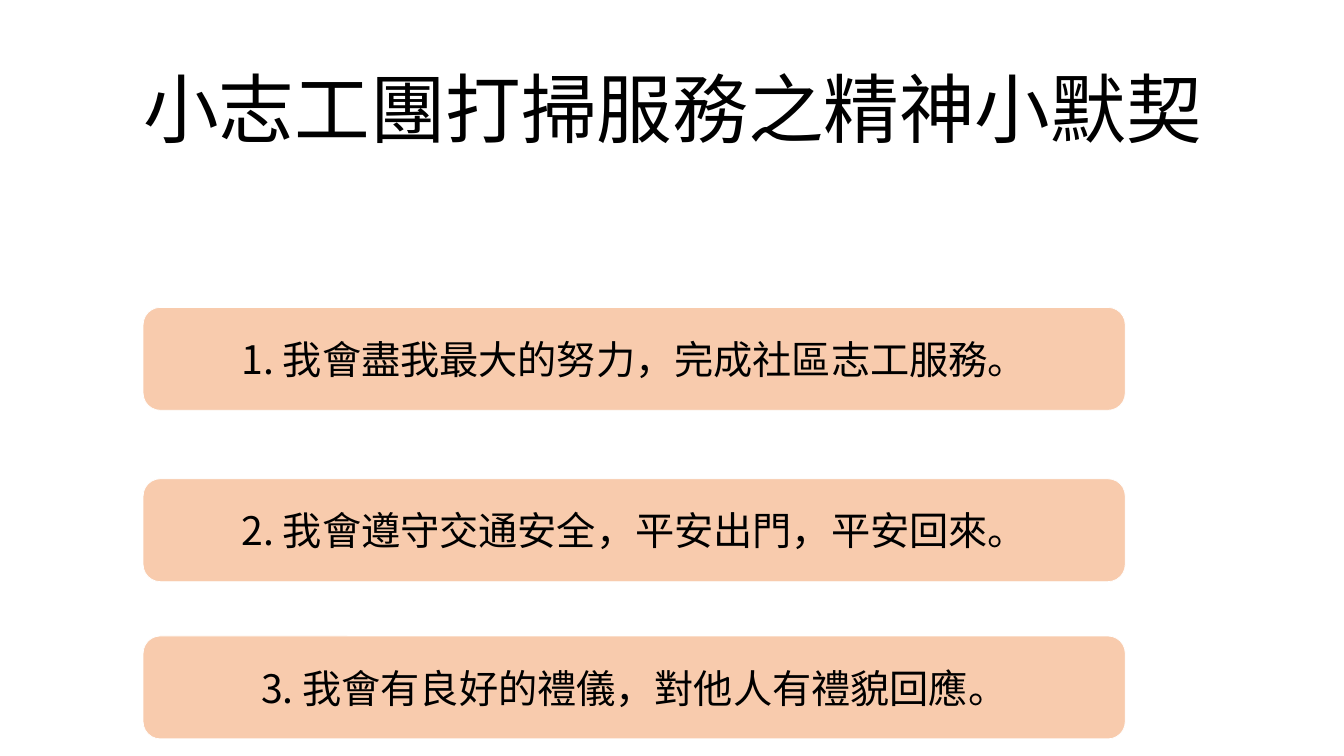
from dataclasses import dataclass

from lxml import etree
from pptx import Presentation
from pptx.dml.color import RGBColor
from pptx.enum.shapes import MSO_SHAPE
from pptx.enum.text import MSO_ANCHOR, PP_ALIGN
from pptx.oxml.ns import qn
from pptx.util import Inches, Pt

ROUNDED = MSO_SHAPE.ROUNDED_RECTANGLE
MIDDLE = MSO_ANCHOR.MIDDLE
CENTER = PP_ALIGN.CENTER

TITLE = "小志工團打掃服務之精神小默契"
PLEDGES = [
    (3.05, "1. 我會盡我最大的努力，完成社區志工服務。"),
    (4.75, "2. 我會遵守交通安全，平安出門，平安回來。"),
    (6.31, "3. 我會有良好的禮儀，對他人有禮貌回應。"),
]
PLEDGE_LEFT, PLEDGE_WIDTH, PLEDGE_HEIGHT = 1.42, 9.74, 1.02


@dataclass(frozen=True)
class Theme:
    font: str = "Noto Sans CJK SC"
    text: RGBColor = RGBColor(0x00, 0x00, 0x00)
    fill: RGBColor = RGBColor(0xF8, 0xCB, 0xAD)
    line: RGBColor = RGBColor(0xFF, 0xFF, 0xFF)
    title_size: int = 54
    pledge_size: int = 28
    line_width: float = 0.5


THEME = Theme()


def write(sp, text, size):
    tf = sp.text_frame
    tf.word_wrap = True
    tf.vertical_anchor = MIDDLE
    p = tf.paragraphs[0]
    p.alignment = CENTER
    r = p.add_run()
    r.text = text
    r.font.size = Pt(size)
    r.font.name = THEME.font
    r.font.color.rgb = THEME.text
    ea = etree.SubElement(r.font._element, qn("a:ea"))
    ea.set("typeface", THEME.font)
    return p


def add_title(s):
    sp = s.shapes.title
    sp.left, sp.top = Inches(0.92), Inches(0.4)
    sp.width, sp.height = Inches(11.5), Inches(1.45)
    p = write(sp, TITLE, THEME.title_size)
    p.line_spacing = 0.9


def add_pledge(s, top, text):
    sp = s.shapes.add_shape(
        ROUNDED, Inches(PLEDGE_LEFT), Inches(top),
        Inches(PLEDGE_WIDTH), Inches(PLEDGE_HEIGHT),
    )
    sp.shadow.inherit = False
    sp.fill.solid()
    sp.fill.fore_color.rgb = THEME.fill
    sp.line.color.rgb = THEME.line
    sp.line.width = Pt(THEME.line_width)
    write(sp, text, THEME.pledge_size)


def main():
    prs = Presentation()
    prs.slide_width, prs.slide_height = Inches(13.33), Inches(7.5)
    s = prs.slides.add_slide(prs.slide_layouts[5])
    add_title(s)
    for top, text in PLEDGES:
        add_pledge(s, top, text)
    prs.save("out.pptx")


if __name__ == "__main__":
    main()
